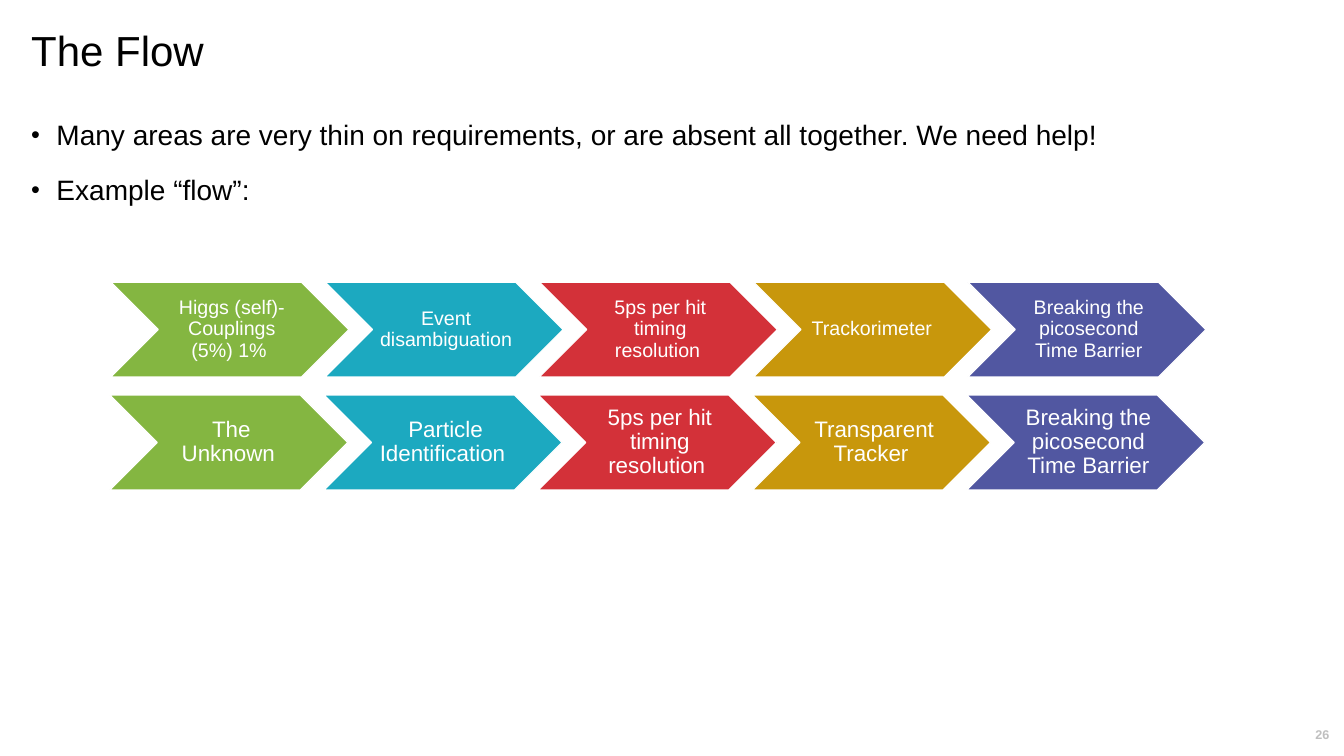
import lxml.etree
import pptx
import pptx.dml.color
import pptx.enum.shapes
import pptx.enum.text
import pptx.oxml.ns
import pptx.util

Inches = pptx.util.Inches
Pt = pptx.util.Pt
RGBColor = pptx.dml.color.RGBColor
Align = pptx.enum.text.PP_ALIGN
Anchor = pptx.enum.text.MSO_ANCHOR

FONT = "Arial"
BLACK = RGBColor(0x00, 0x00, 0x00)
WHITE = RGBColor(0xFF, 0xFF, 0xFF)
GREY = RGBColor(0xBF, 0xBF, 0xBF)
GREEN = RGBColor(0x84, 0xB6, 0x41)
TEAL = RGBColor(0x1C, 0xA9, 0xC0)
RED = RGBColor(0xD3, 0x31, 0x39)
GOLD = RGBColor(0xC8, 0x97, 0x0C)
INDIGO = RGBColor(0x51, 0x57, 0xA1)
STEP_COLORS = [GREEN, TEAL, RED, GOLD, INDIGO]

STEP_WIDTH, STEP_HEIGHT, STEP_PITCH = 2.36, 0.94, 2.12

BULLETS = [
    "Many areas are very thin on requirements, or are absent all together. We need help!",
    "Example “flow”:",
]
HIGGS_FLOW = [
    "Higgs (self)-Couplings\v(5%) 1% ",
    "Event disambiguation ",
    "5ps per hit timing resolution ",
    "Trackorimeter ",
    "Breaking the picosecond Time Barrier",
]
UNKNOWN_FLOW = [
    "The Unknown ",
    "Particle Identification ",
    "5ps per hit timing resolution ",
    "Transparent Tracker ",
    "Breaking the picosecond Time Barrier",
]


def place(box, left, top, width, height):
    box.left, box.top = Inches(left), Inches(top)
    box.width, box.height = Inches(width), Inches(height)


def set_frame(frame, anchor, left=0.1, top=0.05, right=0.1, bottom=0.05):
    frame.word_wrap = True
    frame.auto_size = pptx.enum.text.MSO_AUTO_SIZE.NONE
    frame.vertical_anchor = anchor
    frame.margin_left, frame.margin_top = Inches(left), Inches(top)
    frame.margin_right, frame.margin_bottom = Inches(right), Inches(bottom)


def format_paragraph(para, size, color, align=Align.LEFT, bold=False):
    para.alignment = align
    para.line_spacing = 0.9
    para.font.name = FONT
    para.font.size = Pt(size)
    para.font.bold = bold
    para.font.color.rgb = color


def add_bullet(para):
    properties = para._p.get_or_add_pPr()
    properties.set("marL", str(Inches(0.25)))
    properties.set("indent", str(-Inches(0.25)))
    for tag, name, value in [("a:buSzPct", "val", "90000"),
                             ("a:buFont", "typeface", FONT),
                             ("a:buChar", "char", "•")]:
        mark = lxml.etree.SubElement(properties, pptx.oxml.ns.qn(tag))
        mark.set(name, value)


def fill_title(page, text):
    title = page.shapes.title
    place(title, 0.21, 0.25, 12.75, 0.99)
    set_frame(title.text_frame, Anchor.TOP)
    title.text_frame.text = text
    format_paragraph(title.text_frame.paragraphs[0], 30, BLACK)


def fill_body(page, lines):
    body = page.placeholders[1]
    place(body, 0.21, 1.15, 12.75, 5.04)
    set_frame(body.text_frame, Anchor.TOP)
    body.text_frame.text = "\n".join(lines)
    for index, para in enumerate(body.text_frame.paragraphs):
        add_bullet(para)
        para.space_before = Pt(18 if index else 0)
        format_paragraph(para, 20, BLACK)


def add_flow(page, left, top, labels, size, inset):
    """Add one grouped row of chevron steps."""
    row = page.shapes.add_group_shape()
    for index, (label, color) in enumerate(zip(labels, STEP_COLORS)):
        step = row.shapes.add_shape(
            pptx.enum.shapes.MSO_SHAPE.CHEVRON,
            Inches(left + index * STEP_PITCH + index * 0.005), Inches(top),
            Inches(STEP_WIDTH), Inches(STEP_HEIGHT))
        step.shadow.inherit = False
        step.fill.solid()
        step.fill.fore_color.rgb = color
        step.line.color.rgb = WHITE
        step.line.width = Pt(0.85)
        set_frame(step.text_frame, Anchor.MIDDLE, inset, 0.02, 0.02, 0.02)
        para = step.text_frame.paragraphs[0]
        para.text = label
        format_paragraph(para, size, WHITE, Align.CENTER)


def add_page_number(page, number):
    box = page.shapes.add_textbox(
        Inches(12.96), Inches(7.21), Inches(0.31), Inches(0.17))
    set_frame(box.text_frame, Anchor.MIDDLE, 0, 0, 0, 0)
    para = box.text_frame.paragraphs[0]
    para.text = number
    format_paragraph(para, 9, GREY, Align.CENTER, bold=True)


def main():
    deck = pptx.Presentation()
    deck.slide_width, deck.slide_height = Inches(13.33), Inches(7.5)
    page = deck.slides.add_slide(deck.slide_layouts[1])

    # Title and bullets
    fill_title(page, "The Flow")
    fill_body(page, BULLETS)

    # Example flows
    add_flow(page, 1.1, 2.8, HIGGS_FLOW, 14, 0.06)
    add_flow(page, 1.09, 3.92, UNKNOWN_FLOW, 16, 0.07)

    # Page number
    add_page_number(page, "26")

    deck.save("out.pptx")


if __name__ == "__main__":
    main()
